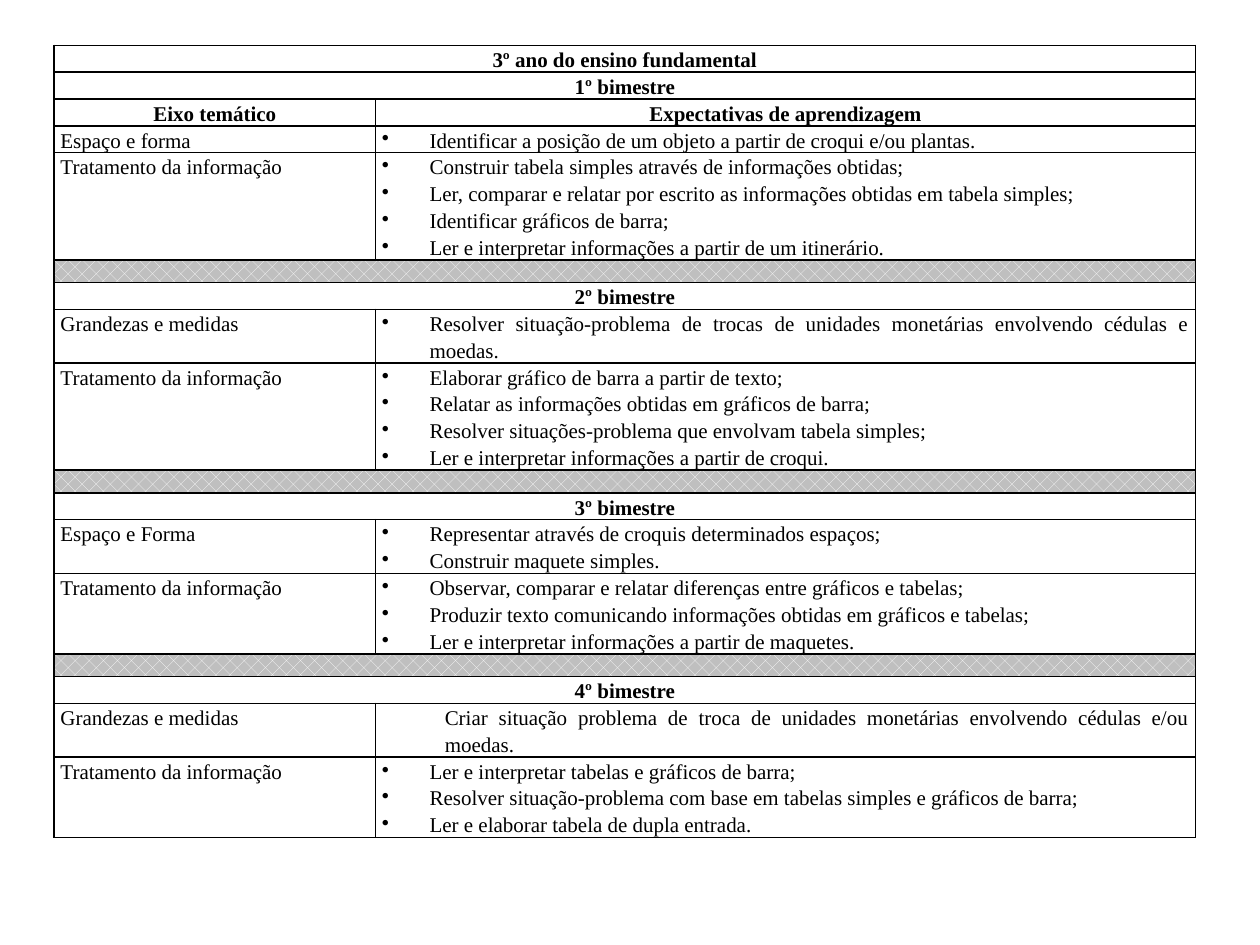
from dataclasses import dataclass

from lxml import etree
from pptx import Presentation
from pptx.dml.color import RGBColor
from pptx.enum.dml import MSO_PATTERN
from pptx.enum.text import PP_ALIGN
from pptx.oxml.ns import qn
from pptx.table import Table, _Cell
from pptx.util import Inches, Pt

CENTER, JUSTIFY = PP_ALIGN.CENTER, PP_ALIGN.JUSTIFY
PERCENT_25 = MSO_PATTERN.PERCENT_25


@dataclass(frozen=True)
class Theme:
    font: str = "Times New Roman"
    size: int = 12
    band_size: int = 10
    line_spacing: float = 1.15
    border_width: float = 1
    ink: str = "000000"
    band_front: str = "FFFFFF"
    band_back: str = "BFBFBF"


@dataclass(frozen=True)
class Topic:
    name: str
    goals: tuple[str, ...]
    lines: int
    bulleted: bool = True


@dataclass(frozen=True)
class Term:
    title: str
    topics: tuple[Topic, ...]


THEME = Theme()
LINE_HEIGHT, BAND_HEIGHT = 0.21, 0.18
COLUMN_WIDTHS = (2.55, 6.51)
TITLE = "3º ano do ensino fundamental"
HEADINGS = ("Eixo temático", "Expectativas de aprendizagem")
DATA_TOPIC = "Tratamento da informação"

TERMS = (
    Term("1º bimestre", (
        Topic("Espaço e forma", (
            "Identificar a posição de um objeto a partir de croqui e/ou plantas.",), 1),
        Topic(DATA_TOPIC, (
            "Construir tabela simples através de informações obtidas;",
            "Ler, comparar e relatar por escrito as informações obtidas em tabela simples;",
            "Identificar gráficos de barra;",
            "Ler e interpretar informações a partir de um itinerário."), 4))),
    Term("2º bimestre", (
        Topic("Grandezas e medidas", (
            "Resolver situação-problema de trocas de unidades monetárias "
            "envolvendo cédulas e moedas.",), 2),
        Topic(DATA_TOPIC, (
            "Elaborar gráfico de barra a partir de texto;",
            "Relatar as informações obtidas em gráficos de barra;",
            "Resolver situações-problema que envolvam tabela simples;",
            "Ler e interpretar informações a partir de croqui."), 4))),
    Term("3º bimestre", (
        Topic("Espaço e Forma", (
            "Representar através de croquis determinados espaços;",
            "Construir maquete simples."), 2),
        Topic(DATA_TOPIC, (
            "Observar, comparar e relatar diferenças entre gráficos e tabelas;",
            "Produzir texto comunicando informações obtidas em gráficos e tabelas;",
            "Ler e interpretar informações a partir de maquetes."), 3))),
    Term("4º bimestre", (
        Topic("Grandezas e medidas", (
            "Criar situação problema de troca de unidades monetárias "
            "envolvendo cédulas e/ou moedas.",), 2, bulleted=False),
        Topic(DATA_TOPIC, (
            "Ler e interpretar tabelas e gráficos de barra;",
            "Resolver situação-problema com base em tabelas simples e gráficos de barra;",
            "Ler e elaborar tabela de dupla entrada."), 3))),
)


def prepare_cell(cell: _Cell) -> None:
    """Set margins, borders and an empty fill."""
    cell.margin_left = cell.margin_right = Inches(0.05)
    cell.margin_top = cell.margin_bottom = 0
    properties = cell._tc.get_or_add_tcPr()
    for side in ("a:lnL", "a:lnR", "a:lnT", "a:lnB"):
        border = etree.SubElement(properties, qn(side), w=str(Pt(THEME.border_width)))
        fill = etree.SubElement(border, qn("a:solidFill"))
        etree.SubElement(fill, qn("a:srgbClr"), val=THEME.ink)
    cell.fill.background()


def write_cell(cell: _Cell, lines: tuple[str, ...], align: PP_ALIGN = JUSTIFY,
               bold: bool = False, margin: float = 0, bullet: str = "") -> None:
    """Write one paragraph per line, with an optional indent and bullet."""
    cell.text_frame.text = "\n".join(lines)
    for para in cell.text_frame.paragraphs:
        para.alignment = align
        para.line_spacing = THEME.line_spacing
        properties = para._p.get_or_add_pPr()
        properties.set("marL", str(Inches(margin)))
        if bullet:
            properties.set("indent", str(-Inches(margin)))
            etree.SubElement(properties, qn("a:buChar"), char=bullet)
        for span in para.runs:
            span.font.name = THEME.font
            span.font.size = Pt(THEME.size)
            span.font.bold = bold
            span.font.color.rgb = RGBColor.from_string(THEME.ink)


def merge_row(table: Table, row: int) -> _Cell:
    """Join both cells of a row and return the joined cell."""
    cell = table.cell(row, 0)
    cell.merge(table.cell(row, 1))
    return cell


def draw_title(table: Table, row: int, title: str) -> None:
    write_cell(merge_row(table, row), (title,), CENTER, bold=True)


def draw_headings(table: Table, row: int) -> None:
    for column, heading in enumerate(HEADINGS):
        write_cell(table.cell(row, column), (heading,), CENTER, bold=True)


def draw_topic(table: Table, row: int, topic: Topic) -> None:
    write_cell(table.cell(row, 0), (topic.name,))
    margin, bullet = (0.38, "•") if topic.bulleted else (0.5, "")
    write_cell(table.cell(row, 1), topic.goals, margin=margin, bullet=bullet)
    table.rows[row].height = Inches(LINE_HEIGHT * topic.lines)


def draw_band(table: Table, row: int) -> None:
    cell = merge_row(table, row)
    cell.fill.patterned()
    cell.fill.pattern = PERCENT_25
    cell.fill.fore_color.rgb = RGBColor.from_string(THEME.band_front)
    cell.fill.back_color.rgb = RGBColor.from_string(THEME.band_back)
    # Small text size so that the empty row stays low
    para = cell.text_frame.paragraphs[0]
    etree.SubElement(para._p, qn("a:endParaRPr"), sz=str(THEME.band_size * 100))
    table.rows[row].height = Inches(BAND_HEIGHT)


def main() -> None:
    deck = Presentation()
    deck.slide_width, deck.slide_height = Inches(10), Inches(7.5)
    page = deck.slides.add_slide(deck.slide_layouts[6])

    # Empty grid: title, headings, then terms parted by bands
    row_count = 2 + sum(1 + len(term.topics) for term in TERMS) + len(TERMS) - 1
    table = page.shapes.add_table(
        row_count, len(COLUMN_WIDTHS), Inches(0.43), Inches(0.36),
        Inches(sum(COLUMN_WIDTHS)), Inches(LINE_HEIGHT * row_count)).table
    table.first_row = table.horz_banding = False
    for column, width in zip(table.columns, COLUMN_WIDTHS):
        column.width = Inches(width)
    for row in table.rows:
        row.height = Inches(LINE_HEIGHT)
    for cell in table.iter_cells():
        prepare_cell(cell)

    # Rows from top to bottom
    draw_title(table, 0, TITLE)
    row = 1
    for term in TERMS:
        if term is not TERMS[0]:
            draw_band(table, row)
            row += 1
        draw_title(table, row, term.title)
        row += 1
        if term is TERMS[0]:
            draw_headings(table, row)
            row += 1
        for topic in term.topics:
            draw_topic(table, row, topic)
            row += 1

    deck.save("out.pptx")


if __name__ == "__main__":
    main()
